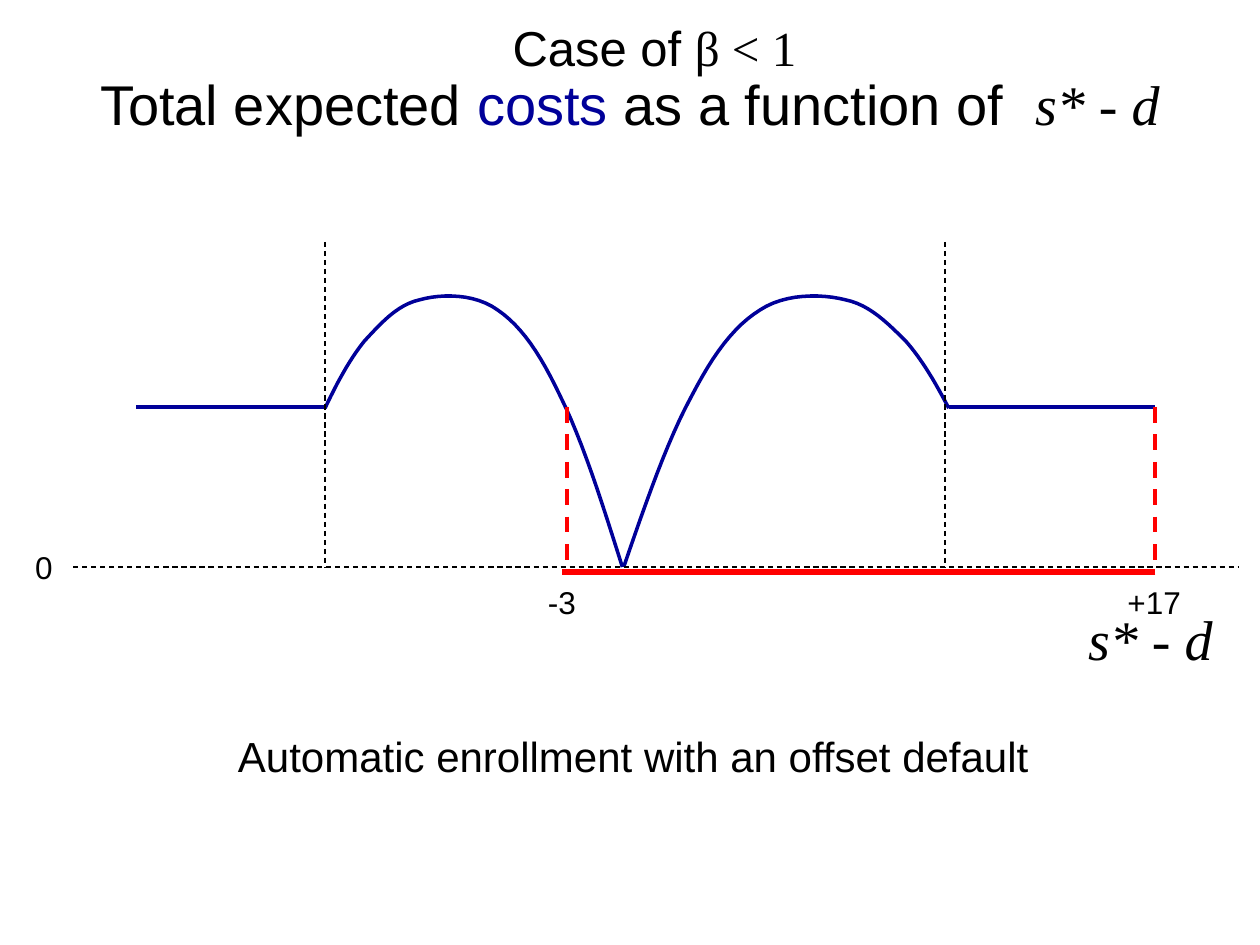
from dataclasses import dataclass

from lxml import etree
from pptx import Presentation
from pptx.dml.color import RGBColor
from pptx.enum.dml import MSO_LINE
from pptx.enum.shapes import MSO_CONNECTOR
from pptx.enum.text import MSO_ANCHOR, MSO_AUTO_SIZE, PP_ALIGN
from pptx.oxml.ns import qn
from pptx.util import Pt

PX = 9144  # 100 px to the inch
STRAIGHT = MSO_CONNECTOR.STRAIGHT
DASH = MSO_LINE.DASH
MIDDLE, TOP = MSO_ANCHOR.MIDDLE, MSO_ANCHOR.TOP
CENTER, LEFT = PP_ALIGN.CENTER, PP_ALIGN.LEFT
GROW, FIXED = MSO_AUTO_SIZE.SHAPE_TO_FIT_TEXT, MSO_AUTO_SIZE.NONE


@dataclass(frozen=True)
class Theme:
    ink: str = "000000"
    cost: str = "000099"
    saver: str = "FF0000"
    sans: str = "Arial"
    serif: str = "Times New Roman"
    title: int = 32
    case: int = 28
    caption: int = 24
    tick: int = 18
    guide_width: float = 0.75
    cost_width: float = 2
    drop_width: float = 2.25
    range_width: float = 3.5


# Cost hump, from the opt-out threshold to zero cost: a start and cubic pieces
HUMP_WIDTH = 236
HUMP_START = (0, 324)
HUMP_PIECES = [
    [(9, 305), (19, 286), (31, 271)],
    [(44, 257), (57, 242), (75, 238)],
    [(93, 233), (119, 233), (137, 246)],
    [(156, 259), (171, 281), (187, 315)],
    [(204, 349), (220, 399), (236, 450)],
]
STEPS = 12

AXIS_Y, FLAT_Y, GUIDE_TOP = 450, 323, 192
LOW, HIGH = 450, 917  # ends of the savers' range


def bezier(p0, p1, p2, p3, t):
    u = 1 - t
    return tuple(
        u**3 * a + 3 * u * u * t * b + 3 * u * t * t * c + t**3 * d
        for a, b, c, d in zip(p0, p1, p2, p3)
    )


def hump_points(x_start, x_end):
    """Points of the hump stretched, or mirrored, between two x positions."""
    points, p0 = [HUMP_START], HUMP_START
    for piece in HUMP_PIECES:
        points += [bezier(p0, *piece, i / STEPS) for i in range(1, STEPS + 1)]
        p0 = piece[-1]
    k = (x_end - x_start) / HUMP_WIDTH
    return [(x_start + x * k, y) for x, y in points]


def add_run(p, text, size, font, color, italic=False):
    r = p.add_run()
    r.text = text
    r.font.size = Pt(size)
    r.font.name = font
    r.font.italic = italic
    r.font.color.rgb = RGBColor.from_string(color)


class Canvas:
    def __init__(self, slide, theme):
        self.s, self.theme = slide, theme

    def text(self, x, y, w, h, runs, size, wrap=False, align=LEFT, anchor=TOP):
        """Each run is its text and a dict of what differs from black sans."""
        t = self.theme
        tf = self.s.shapes.add_textbox(x * PX, y * PX, w * PX, h * PX).text_frame
        tf.word_wrap = wrap
        tf.auto_size = FIXED if wrap else GROW
        tf.vertical_anchor = anchor
        p = tf.paragraphs[0]
        p.alignment = align
        for text, style in runs:
            add_run(p, text, size, **{"font": t.sans, "color": t.ink, **style})

    def stroke(self, line, color, width, dash=None):
        line.color.rgb = RGBColor.from_string(color)
        line.width = Pt(width)
        if dash is not None:
            line.dash_style = dash

    def line(self, x1, y1, x2, y2, color, width, dash=None):
        sp = self.s.shapes.add_connector(
            STRAIGHT, x1 * PX, y1 * PX, x2 * PX, y2 * PX)
        self.stroke(sp.line, color, width, dash)
        etree.SubElement(sp._element.spPr, qn("a:effectLst"))

    def curve(self, points, color, width):
        emu = [(round(x * PX), round(y * PX)) for x, y in points]
        fb = self.s.shapes.build_freeform(*emu[0])
        fb.add_line_segments(emu[1:], close=False)
        sp = fb.convert_to_shape()
        sp.shadow.inherit = False
        sp.fill.background()
        self.stroke(sp.line, color, width)


def main():
    prs = Presentation()
    prs.slide_width, prs.slide_height = 1000 * PX, 750 * PX
    t = Theme()
    c = Canvas(prs.slides.add_slide(prs.slide_layouts[6]), t)
    gap = ("s* - d", {"font": t.serif, "italic": True})

    c.text(50, 30, 900, 103, [
        ("Total expected ", {}),
        ("costs", {"color": t.cost}),
        (" as a function of  ", {}),
        gap,
    ], t.title, wrap=True, align=CENTER, anchor=MIDDLE)
    c.text(397, 9, 248, 57,
           [("Case of ", {}), ("β < 1", {"font": t.serif})], t.case)

    for x_start, x_end in ((258, 494), (753, 495)):
        c.curve(hump_points(x_start, x_end), t.cost, t.cost_width)
    for x1, x2 in ((108, 258), (753, HIGH)):
        c.line(x1, FLAT_Y, x2, FLAT_Y, t.cost, t.cost_width)

    c.line(58, AXIS_Y, 983, AXIS_Y, t.ink, t.guide_width, DASH)
    for x in (258, 750):
        c.line(x, GUIDE_TOP, x, AXIS_Y, t.ink, t.guide_width, DASH)
    for x in (LOW, HIGH):
        c.line(x, FLAT_Y, x, AXIS_Y, t.saver, t.drop_width, DASH)

    c.text(842, 455, 142, 103, [gap], t.title,
           wrap=True, align=CENTER, anchor=MIDDLE)
    for x, y, w, label in ((18, 430, 34, "0"), (425, 458, 43, "-3"),
                           (885, 458, 63, "+17")):
        c.text(x, y, w, 40, [(label, {})], t.tick)
    c.text(179, 575, 654, 50,
           [("Automatic enrollment with an offset default", {})], t.caption)
    c.line(HIGH, 454, 446, 454, t.saver, t.range_width)

    prs.save("out.pptx")


if __name__ == "__main__":
    main()
